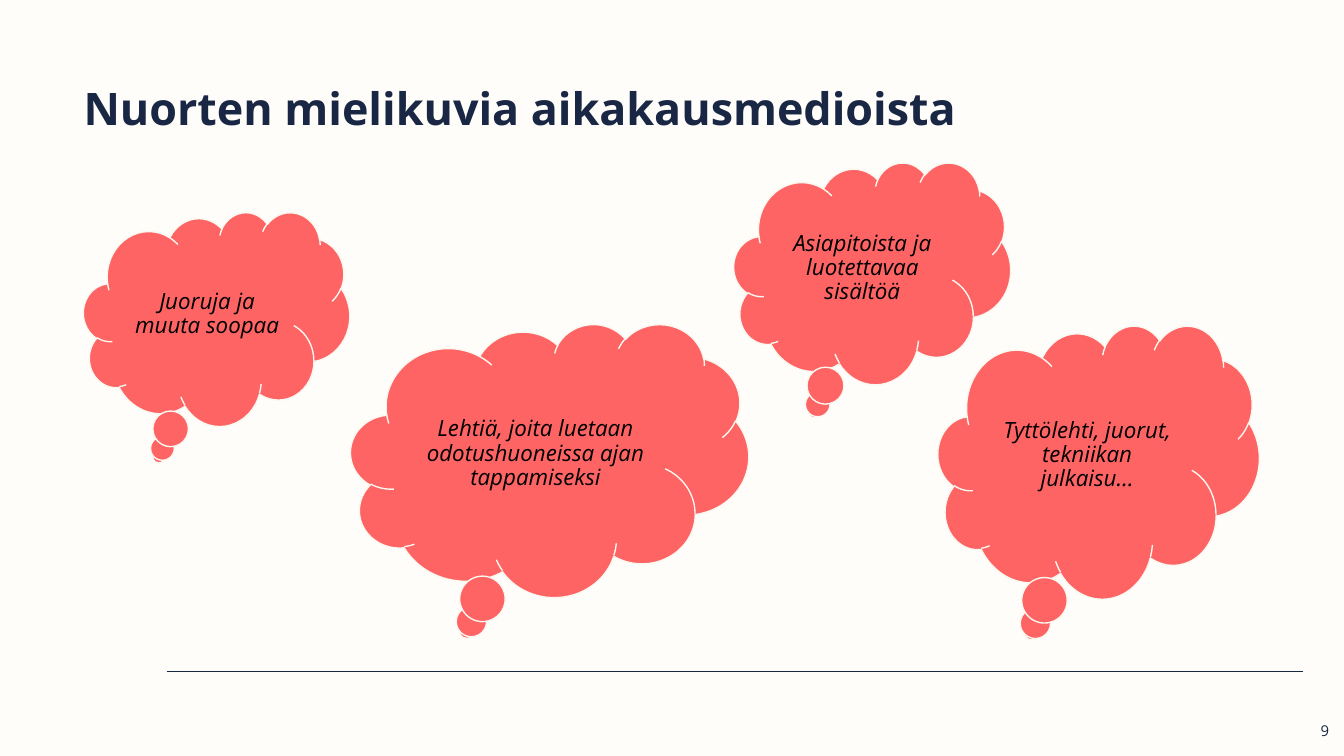
from lxml.etree import SubElement
from pptx import Presentation
from pptx.dml.color import RGBColor
from pptx.enum.shapes import MSO_CONNECTOR, MSO_SHAPE
from pptx.enum.text import MSO_ANCHOR, PP_ALIGN
from pptx.oxml.ns import qn
from pptx.util import Cm, Pt


class Theme:
    paper = RGBColor.from_string("FFFDF9")
    navy = RGBColor.from_string("192644")
    coral = RGBColor.from_string("FF6465")
    cream = RGBColor.from_string("FAF7F0")
    black = RGBColor.from_string("000000")
    face = "Open Sans"
    title, body, small = Pt(24), Pt(12), Pt(8)
    line = Pt(0.75)


def put(item, **format):
    for name, value in format.items():
        setattr(item, name, value)


def write(shape, text, pads, align, space, **font):
    """Fill the shape with one paragraph; pads are left, top, right, bottom in cm."""
    frame = shape.text_frame
    sides = ("left", "top", "right", "bottom")
    put(frame, word_wrap=True, **{f"margin_{s}": Cm(p) for s, p in zip(sides, pads)})
    para = frame.paragraphs[0]
    put(para, alignment=align, line_spacing=space)
    run = para.add_run()
    run.text = text
    color = font.pop("color")
    put(run.font, name=Theme.face, **font)
    run.font.color.rgb = color
    return frame


deck = Presentation()
put(deck, slide_width=Cm(25.4), slide_height=Cm(14.29))
slide = deck.slides.add_slide(deck.slide_layouts[6])
slide.background.fill.solid()
slide.background.fill.fore_color.rgb = Theme.paper
shapes = slide.shapes

# Footer rule
rule = shapes.add_connector(MSO_CONNECTOR.STRAIGHT, Cm(3.15), Cm(12.69), Cm(24.62), Cm(12.69))
rule.line.color.rgb = Theme.navy
rule.line.width = Theme.line
SubElement(rule._element.spPr, qn("a:effectLst"))

# Title
title = shapes.add_textbox(Cm(1.58), Cm(1.27), Cm(22.23), Cm(1.68))
write(title, "Nuorten mielikuvia aikakausmedioista", (0, 0.25, 0.25, 0.25),
      PP_ALIGN.LEFT, 1.0, size=Theme.title, bold=True, color=Theme.navy)

# Thought clouds: text, left, top, width, height, tail offset
tail = (-0.208, 0.625)
clouds = [
    ("Asiapitoista ja luotettavaa sisältöä", 13.87, 3.07, 5.23, 4.19, tail),
    ("Lehtiä, joita luetaan odotushuoneissa ajan tappamiseksi", 6.63, 6.12, 7.52, 5.16, tail),
    ("Juoruja ja muuta soopaa", 1.58, 4.01, 5.03, 4.04, (-0.217, 0.646)),
    ("Tyttölehti, juorut, tekniikan julkaisu…", 17.73, 6.15, 6.07, 5.16, tail),
]
for text, *place, tip in clouds:
    cloud = shapes.add_shape(MSO_SHAPE.CLOUD_CALLOUT, *map(Cm, place))
    cloud.adjustments[0], cloud.adjustments[1] = tip
    cloud.shadow.inherit = False
    cloud.fill.solid()
    cloud.fill.fore_color.rgb = Theme.coral
    cloud.line.color.rgb = Theme.cream
    cloud.line.width = Theme.line
    frame = write(cloud, text, (0.25,) * 4, PP_ALIGN.CENTER, 0.9,
                  size=Theme.body, italic=True, color=Theme.black)
    frame.vertical_anchor = MSO_ANCHOR.MIDDLE

# Page number
page = shapes.add_textbox(Cm(23.6), Cm(13.39), Cm(1.52), Cm(1.09))
write(page, "9", (0.25, 0.25, 0, 0), PP_ALIGN.RIGHT, 1.0, size=Theme.small, color=Theme.navy)

deck.save("out.pptx")
